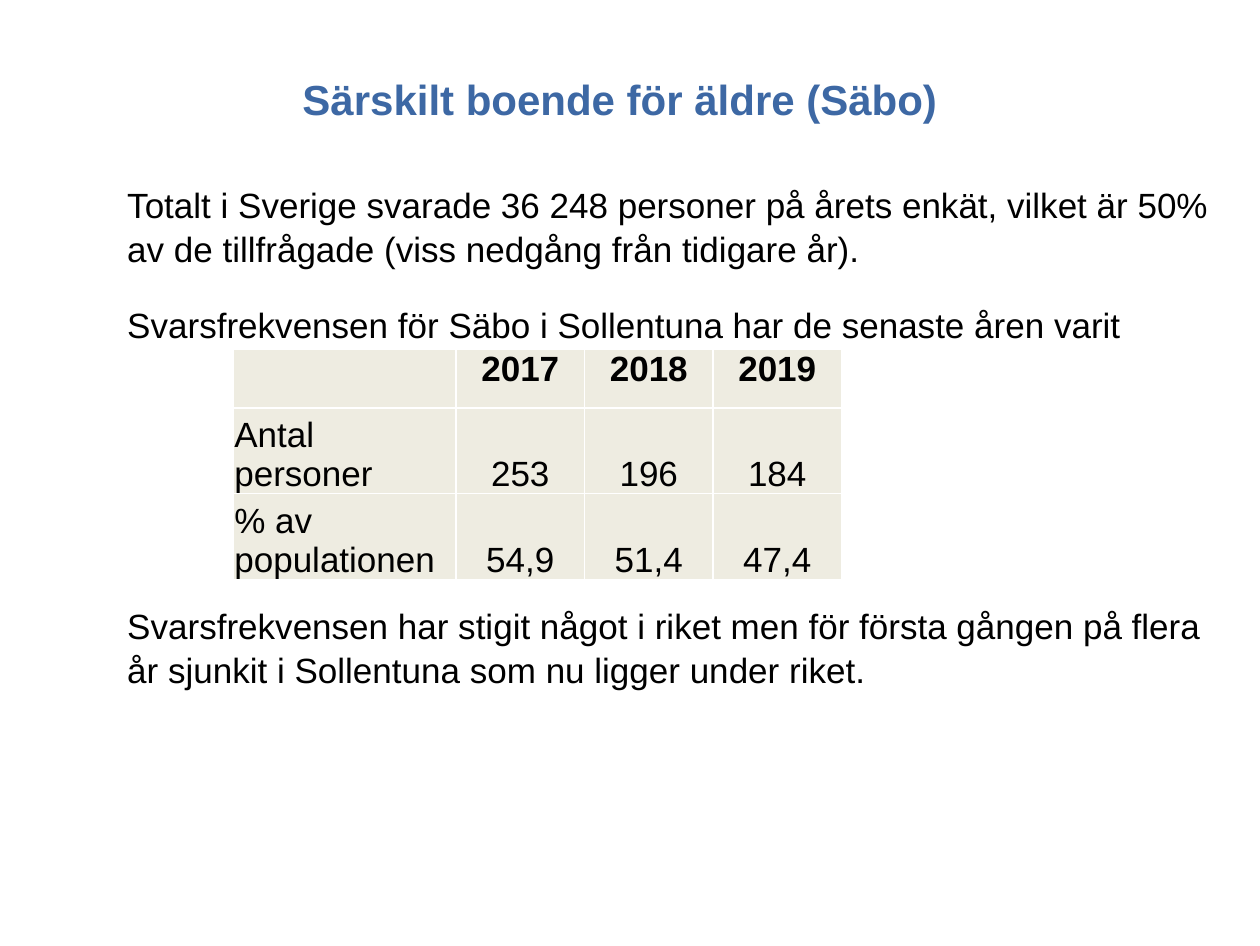
from dataclasses import dataclass

from lxml.etree import SubElement
from pptx import Presentation
from pptx.dml.color import RGBColor
from pptx.enum.text import MSO_ANCHOR, MSO_AUTO_SIZE, PP_ALIGN
from pptx.oxml.ns import qn
from pptx.util import Inches, Pt


@dataclass(frozen=True)
class Theme:
    font: str = "Arial"
    heading: str = "3D68A4"
    text: str = "000000"
    cell: str = "EEECE1"
    border: str = "FFFFFF"
    title_size: int = 24
    body_size: int = 20
    border_width: int = 1


def apply_format(target, values):
    for name, value in values.items():
        setattr(target, name, value)


class SlideBuilder:
    def __init__(self, slide, theme):
        self.slide = slide
        self.theme = theme

    def style_font(self, paragraph, size, color, bold=False):
        apply_format(paragraph.font, {"name": self.theme.font, "size": Pt(size), "bold": bold})
        paragraph.font.color.rgb = RGBColor.from_string(color)

    def place(self, placeholder, box, anchor):
        left, top, width, height = map(Inches, box)
        apply_format(placeholder, {"left": left, "top": top, "width": width, "height": height})
        apply_format(placeholder.text_frame, {
            "word_wrap": True,
            "auto_size": MSO_AUTO_SIZE.NONE,
            "vertical_anchor": anchor,
        })
        return placeholder.text_frame

    def title(self, wording, box):
        frame = self.place(self.slide.shapes.title, box, MSO_ANCHOR.MIDDLE)
        frame.text = wording
        heading = frame.paragraphs[0]
        heading.alignment = PP_ALIGN.CENTER
        self.style_font(heading, self.theme.title_size, self.theme.heading, True)

    def body(self, statements, box):
        frame = self.place(self.slide.placeholders[1], box, MSO_ANCHOR.TOP)
        frame.text = "\n".join(wording for wording, _ in statements)
        for paragraph, (_, gap) in zip(frame.paragraphs, statements):
            apply_format(paragraph, {"space_before": Pt(gap), "line_spacing": 1.05})
            properties = paragraph._p.get_or_add_pPr()
            properties.set("marL", "0")
            properties.set("indent", "0")
            SubElement(properties, qn("a:buNone"))
            self.style_font(paragraph, self.theme.body_size, self.theme.text)

    def borders(self, cell):
        properties = cell._tc.get_or_add_tcPr()
        for side in ("lnL", "lnR", "lnT", "lnB"):
            line = SubElement(properties, qn(f"a:{side}"), w=str(Pt(self.theme.border_width)))
            fill = SubElement(line, qn("a:solidFill"))
            SubElement(fill, qn("a:srgbClr"), val=self.theme.border)

    def cell(self, cell, wording, is_header, is_label):
        apply_format(cell, {
            "text": wording,
            "margin_left": Inches(0.01),
            "margin_right": Inches(0.01),
            "margin_top": Inches(0.01),
            "margin_bottom": 0,
            "vertical_anchor": MSO_ANCHOR.TOP if is_header else MSO_ANCHOR.BOTTOM,
        })
        self.borders(cell)
        cell.fill.solid()
        cell.fill.fore_color.rgb = RGBColor.from_string(self.theme.cell)
        paragraph = cell.text_frame.paragraphs[0]
        paragraph.alignment = PP_ALIGN.LEFT if is_label else PP_ALIGN.CENTER
        self.style_font(paragraph, self.theme.body_size, self.theme.text, is_header)

    def table(self, rows, left, top, widths, heights):
        table = self.slide.shapes.add_table(
            len(rows), len(widths), Inches(left), Inches(top),
            Inches(sum(widths)), Inches(sum(heights)),
        ).table
        apply_format(table, {"first_row": False, "horz_banding": False})
        for column, width in zip(table.columns, widths):
            column.width = Inches(width)
        for row, height in zip(table.rows, heights):
            row.height = Inches(height)
        for r, values in enumerate(rows):
            for c, wording in enumerate(values):
                self.cell(table.cell(r, c), wording, r == 0, c == 0)


def main():
    presentation = Presentation()
    apply_format(presentation, {"slide_width": Inches(10), "slide_height": Inches(7.51)})
    slide = presentation.slides.add_slide(presentation.slide_layouts[1])
    builder = SlideBuilder(slide, Theme())

    builder.title("Särskilt boende för äldre (Säbo)", (0.67, 0.43, 8.5, 0.71))
    builder.body([
        ("Totalt i Sverige svarade 36 248 personer på årets enkät, vilket är 50% "
         "av de tillfrågade (viss nedgång från tidigare år).", 0),
        ("Svarsfrekvensen för Säbo i Sollentuna har de senaste åren varit", 18),
        ("Svarsfrekvensen har stigit något i riket men för första gången på flera "
         "år sjunkit i Sollentuna som nu ligger under riket.", 147),
    ], (0.91, 1.39, 8.9, 4.58))
    builder.table([
        ("", "2017", "2018", "2019"),
        ("Antal personer", "253", "196", "184"),
        ("% av populationen", "54,9", "51,4", "47,4"),
    ], 1.85, 2.77, [1.77] + [1.02] * 3, [0.47] + [0.68] * 2)

    presentation.save("out.pptx")


if __name__ == "__main__":
    main()
